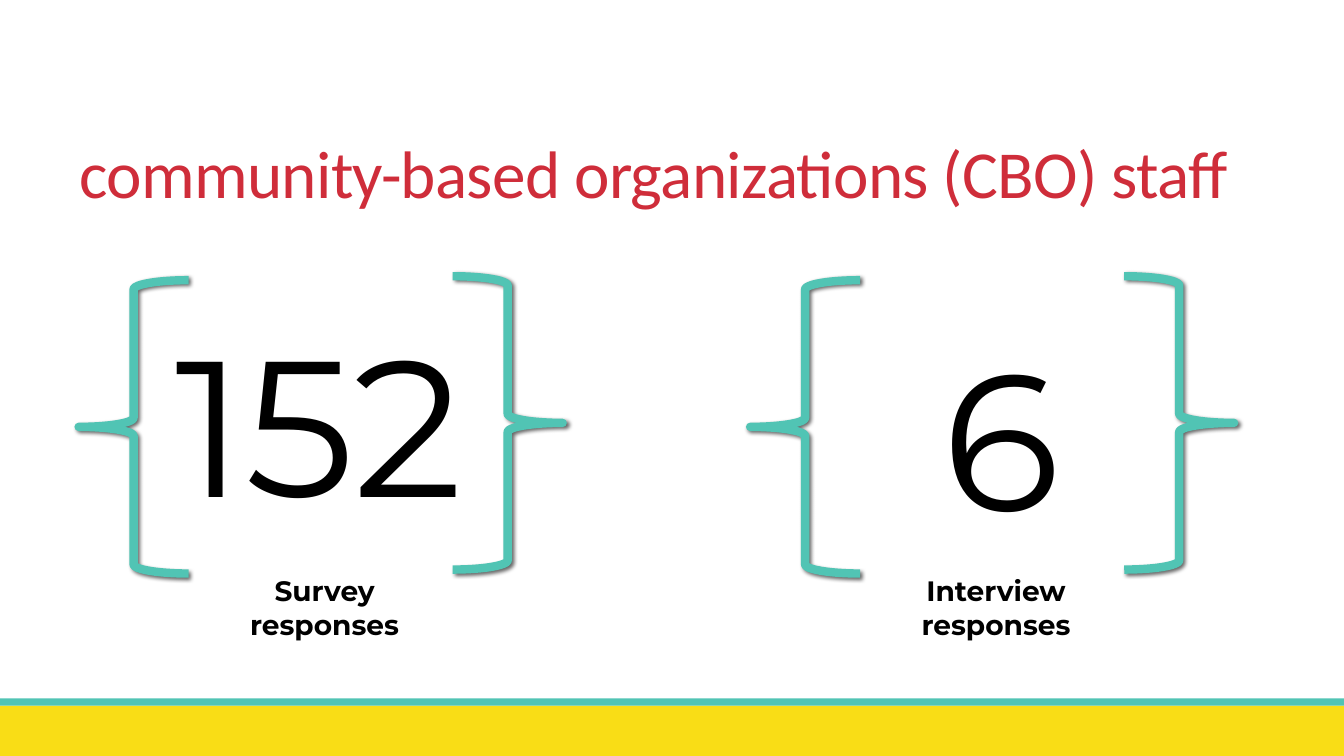
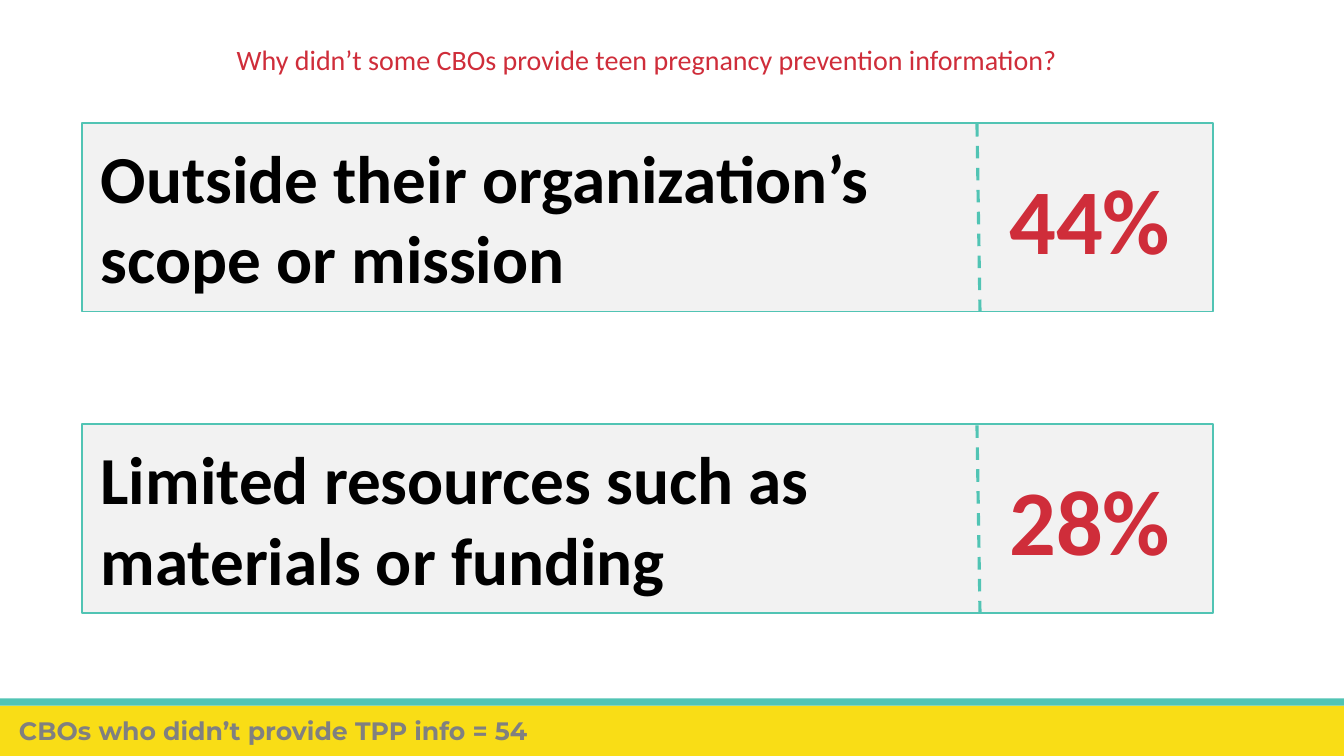
from dataclasses import dataclass

from lxml import etree
from pptx import Presentation
from pptx import util as u
from pptx.dml.color import RGBColor
from pptx.enum import dml, shapes, text
from pptx.oxml import parse_xml
from pptx.oxml.ns import nsdecls, qn


@dataclass(frozen=True)
class Theme:
    yellow: str = "F9DD16"
    teal: str = "51C4B4"
    red: str = "CF2D3A"
    black: str = "000000"
    grey: str = "808080"
    panel: str = "F2F2F2"
    body_font: str = "Calibri"
    accent_font: str = "Montserrat"
    figure: int = 138
    percent: int = 66
    headline: int = 48
    small: int = 20
    note: int = 18


THEME = Theme()
TITLE = {"name": THEME.body_font, "size": THEME.headline, "color": THEME.red}
QUESTION = {**TITLE, "size": THEME.small}
FIGURE = {"name": THEME.accent_font, "size": THEME.figure, "color": THEME.black}
LABEL = {**FIGURE, "size": THEME.small, "bold": True}
REASON = {"name": THEME.body_font, "size": THEME.headline, "color": THEME.black, "bold": True}
PERCENT = {**REASON, "size": THEME.percent, "color": THEME.red}
NOTE = {**LABEL, "size": THEME.note, "color": THEME.grey}

SLIDE_W, SLIDE_H = 13.33, 7.5
BAND_TOP = 7
STRIPE_H = 0.07
BRACE_W, BRACE_H = 1.09, 2.91
SHADOW = (
    f'<a:effectLst {nsdecls("a")}><a:outerShdw blurRad="38100" dist="25400" dir="2700000">'
    '<a:srgbClr val="000000"><a:alpha val="60000"/></a:srgbClr></a:outerShdw></a:effectLst>'
)


def inches(*lengths):
    return [u.Inches(length) for length in lengths]


def set_line(line, color, width):
    line.color.rgb = RGBColor.from_string(color)
    line.width = u.Pt(width)


def write(frame, words, style, align=text.PP_ALIGN.LEFT, anchor=text.MSO_ANCHOR.TOP,
          fit=text.MSO_AUTO_SIZE.SHAPE_TO_FIT_TEXT):
    settings = {"word_wrap": True, "auto_size": fit, "vertical_anchor": anchor}
    for key, value in settings.items():
        setattr(frame, key, value)
    paragraph = frame.paragraphs[0]
    paragraph.alignment = align
    run = paragraph.add_run()
    run.text = words
    for key, value in style.items():
        if key == "color":
            run.font.color.rgb = RGBColor.from_string(value)
        else:
            setattr(run.font, key, u.Pt(value) if key == "size" else value)
    return paragraph


def add_text(parts, box, words, style, align=text.PP_ALIGN.LEFT):
    write(parts.add_textbox(*inches(*box)).text_frame, words, style, align)


def add_rect(parts, box, fill):
    rect = parts.add_shape(shapes.MSO_SHAPE.RECTANGLE, *inches(*box))
    rect.shadow.inherit = False
    rect.fill.solid()
    rect.fill.fore_color.rgb = RGBColor.from_string(fill)
    rect.line.fill.background()
    return rect


def add_bands(layout, slide):
    bands = (
        ((0, BAND_TOP, SLIDE_W, SLIDE_H - BAND_TOP), THEME.yellow),
        ((0, BAND_TOP - STRIPE_H, SLIDE_W, STRIPE_H), THEME.teal),
    )
    for index, (box, fill) in enumerate(bands, start=2):
        band = add_rect(slide.shapes, box, fill)
        layout.shapes.element.insert(index, band.element)


def place_title(slide, box, words, style, anchor):
    title = slide.shapes.title
    for side, length in zip(("left", "top", "width", "height"), inches(*box)):
        setattr(title, side, length)
    return write(title.text_frame, words, style, text.PP_ALIGN.CENTER, anchor,
                 text.MSO_AUTO_SIZE.NONE)


def add_brace(parts, left, top, rotation):
    brace = parts.add_shape(shapes.MSO_SHAPE.LEFT_BRACE, *inches(left, top, BRACE_W, BRACE_H))
    brace.rotation = rotation
    brace.fill.background()
    set_line(brace.line, THEME.teal, 6)
    brace.element.spPr.append(parse_xml(SHADOW))


def braced_figure(slide, left, top, figure, figure_box, label):
    parts = slide.shapes.add_group_shape().shapes
    dx, dy, width, height = figure_box
    add_brace(parts, left, top + 0.04, 0)
    add_text(parts, (left + dx, top + dy, width, height), figure, FIGURE)
    add_brace(parts, left + 3.71, top, 180)
    add_text(parts, (left + 1.09, top + 2.9, 2.7, 0.77), label, LABEL, text.PP_ALIGN.CENTER)


def reason_row(slide, left, top, reason, percent):
    width, height = 11.22, 1.87
    parts = slide.shapes.add_group_shape().shapes
    panel = add_rect(parts, (left, top, width, height), THEME.panel)
    set_line(panel.line, THEME.teal, 1.25)
    divider = parts.add_connector(
        shapes.MSO_CONNECTOR.STRAIGHT,
        *inches(left + 8.88, top + 0.01, left + 8.91, top + height),
    )
    set_line(divider.line, THEME.teal, 2.25)
    divider.line.dash_style = dml.MSO_LINE.DASH
    etree.SubElement(divider.element.spPr, qn("a:effectLst"))
    add_text(parts, (left + 0.09, top + 0.08, 8.66, 1.72), reason, REASON)
    add_text(parts, (left + 9.04, top + 0.34, 1.92, 1.21), percent, PERCENT,
             text.PP_ALIGN.CENTER)


def participants_slide(slide):
    heading = place_title(slide, (0.37, 0.48, 12.23, 1.68),
                          "community-based organizations (CBO) staff", TITLE,
                          text.MSO_ANCHOR.BOTTOM)
    heading.line_spacing = 0.85
    heading.runs[0].font._element.set("spc", "-50")
    figures = (
        ("152", (0.86, 0.23, 3.75, 2.22), "Survey responses"),
        ("6", (1.81, 0.37, 1.34, 2.42), "Interview responses"),
    )
    for column, (figure, figure_box, label) in enumerate(figures):
        braced_figure(slide, 0.78 + 6.66 * column, 2.74, figure, figure_box, label)


def reasons_slide(slide):
    place_title(slide, (0.58, 0.37, 11.67, 0.44),
                "Why didn’t some CBOs provide teen pregnancy prevention information?",
                QUESTION, text.MSO_ANCHOR.TOP)
    reasons = (
        ("Outside their organization’s scope or mission", "44%"),
        ("Limited resources such as materials or funding", "28%"),
    )
    for row, (reason, percent) in enumerate(reasons):
        reason_row(slide, 0.81, 1.22 + 2.99 * row, reason, percent)
    add_text(slide.shapes, (0.09, 7.05, 5.57, 0.4),
             "CBOs who didn’t provide TPP info = 54", NOTE)


def main():
    deck = Presentation()
    deck.slide_width, deck.slide_height = inches(SLIDE_W, SLIDE_H)
    layout = deck.slide_layouts.get_by_name("Title Only")
    participants = deck.slides.add_slide(layout)
    add_bands(layout, participants)
    participants_slide(participants)
    reasons_slide(deck.slides.add_slide(layout))
    deck.save("out.pptx")


if __name__ == "__main__":
    main()
